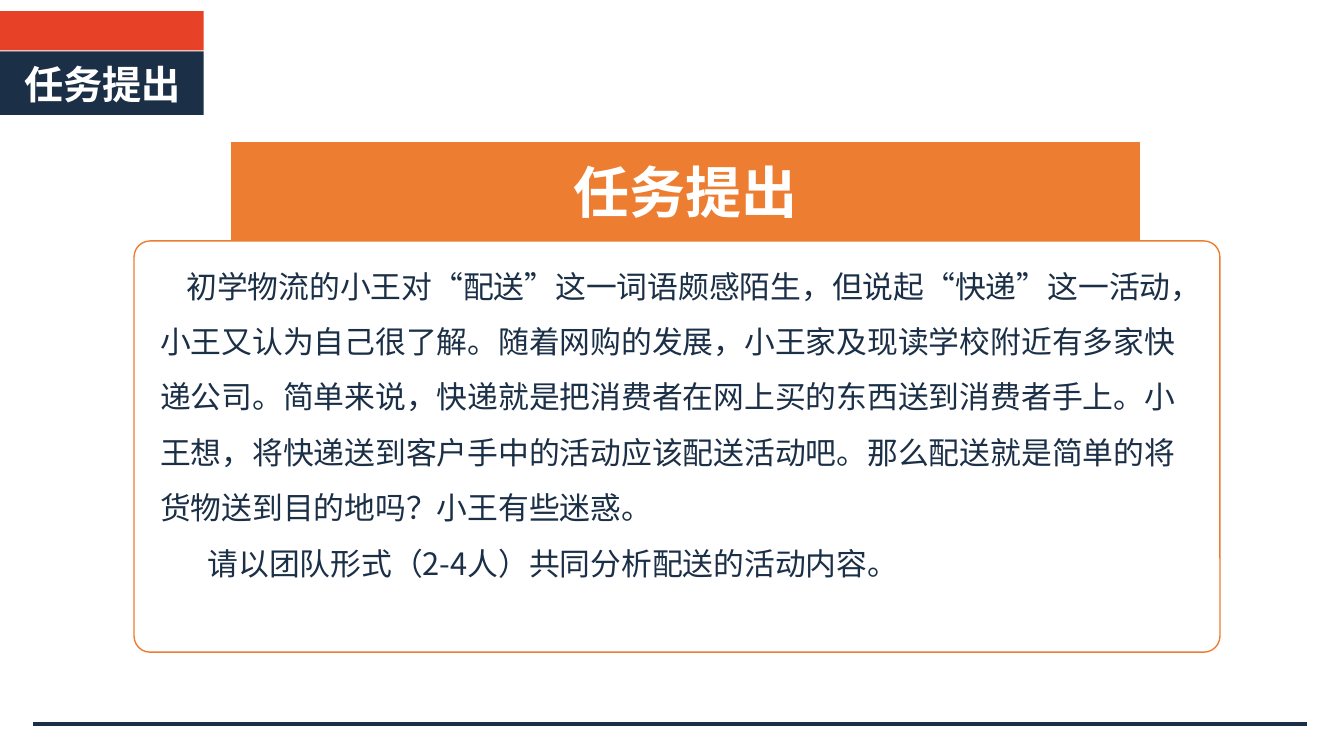
from dataclasses import dataclass

from lxml import etree
from pptx import Presentation
from pptx.dml.color import RGBColor
from pptx.enum import shapes, text
from pptx.oxml import ns
from pptx.util import Inches, Pt


@dataclass(frozen=True)
class Theme:
    navy: RGBColor = RGBColor.from_string("1B2F47")
    red: RGBColor = RGBColor.from_string("E74127")
    orange: RGBColor = RGBColor.from_string("ED7D31")
    white: RGBColor = RGBColor.from_string("FFFFFF")
    font: str = "Noto Sans CJK SC"
    tag_size: Pt = Pt(28)
    banner_size: Pt = Pt(40)
    body_size: Pt = Pt(22)


THEME = Theme()
HEADING = "任务提出"
STORY = (
    "初学物流的小王对“配送”这一词语颇感陌生，但说起“快递”这一活动，"
    "小王又认为自己很了解。随着网购的发展，小王家及现读学校附近有多家快递公司。"
    "简单来说，快递就是把消费者在网上买的东西送到消费者手上。"
    "小王想，将快递送到客户手中的活动应该配送活动吧。"
    "那么配送就是简单的将货物送到目的地吗？小王有些迷惑。"
)
ASSIGNMENT = "请以团队形式（2-4人）共同分析配送的活动内容。"


def add_panel(slide, kind, box, fill, line=None, width=1, corner=None):
    panel = slide.shapes.add_shape(kind, *map(Inches, box))
    panel.shadow.inherit = False
    panel.fill.solid()
    panel.fill.fore_color.rgb = fill
    if line is None:
        panel.line.fill.background()
    else:
        panel.line.color.rgb = line
        panel.line.width = Pt(width)
    if corner is not None:
        panel.adjustments[0] = corner
    return panel


def add_text_area(slide, box):
    area = slide.shapes.add_textbox(*map(Inches, box))
    area.text_frame.word_wrap = True
    return area.text_frame


def write(paragraph, words, color, indent=0, **formats):
    """Fill a paragraph with one run in the theme font."""
    if indent:
        paragraph._p.get_or_add_pPr().set("indent", str(Inches(indent)))
    run = paragraph.add_run()
    run.text = words
    run.font.color.rgb = color
    for name, value in {"name": THEME.font, **formats}.items():
        setattr(run.font, name, value)
    east_asian = etree.SubElement(run._r.get_or_add_rPr(), ns.qn("a:ea"))
    east_asian.set("typeface", THEME.font)


def add_rule(slide, start, end, y):
    ends = map(Inches, (start, y, end, y))
    rule = slide.shapes.add_connector(shapes.MSO_CONNECTOR.STRAIGHT, *ends)
    rule.line.color.rgb = THEME.navy
    rule.line.width = Pt(3)
    etree.SubElement(rule._element.spPr, ns.qn("a:effectLst"))


def main():
    deck = Presentation()
    deck.slide_width, deck.slide_height = Inches(13.33), Inches(7.5)
    slide = deck.slides.add_slide(deck.slide_layouts[6])
    rounded = shapes.MSO_SHAPE.ROUNDED_RECTANGLE

    # Section tag in the corner
    add_panel(slide, rounded, (0, 0.51, 2.02, 0.63), THEME.navy, corner=0)
    tag = add_text_area(slide, (0.14, 0.55, 1.88, 0.6))
    write(tag.paragraphs[0], HEADING, THEME.white, size=THEME.tag_size, bold=True)
    add_panel(slide, rounded, (0, 0.11, 2.02, 0.39), THEME.red, corner=0)

    # Footer rule
    add_rule(slide, 0.33, 12.96, 7.18)

    # Task card
    add_panel(slide, rounded, (1.33, 2.39, 10.77, 4.08), THEME.white,
              line=THEME.orange, corner=0.039)
    body = add_text_area(slide, (1.49, 2.42, 10.32, 3.55))
    for number, (words, indent) in enumerate([(STORY, 0.26), (ASSIGNMENT, 0.47)]):
        paragraph = body.add_paragraph() if number else body.paragraphs[0]
        paragraph.line_spacing = 1.5
        write(paragraph, words, THEME.navy, indent, size=THEME.body_size)

    # Banner above the card
    banner = add_panel(slide, shapes.MSO_SHAPE.RECTANGLE, (2.3, 1.41, 9, 0.98),
                       THEME.orange, line=THEME.orange, width=0.75)
    banner.text_frame.vertical_anchor = text.MSO_ANCHOR.MIDDLE
    title = banner.text_frame.paragraphs[0]
    title.alignment = text.PP_ALIGN.CENTER
    write(title, HEADING, THEME.white, size=THEME.banner_size, bold=True)

    deck.save("out.pptx")


if __name__ == "__main__":
    main()
